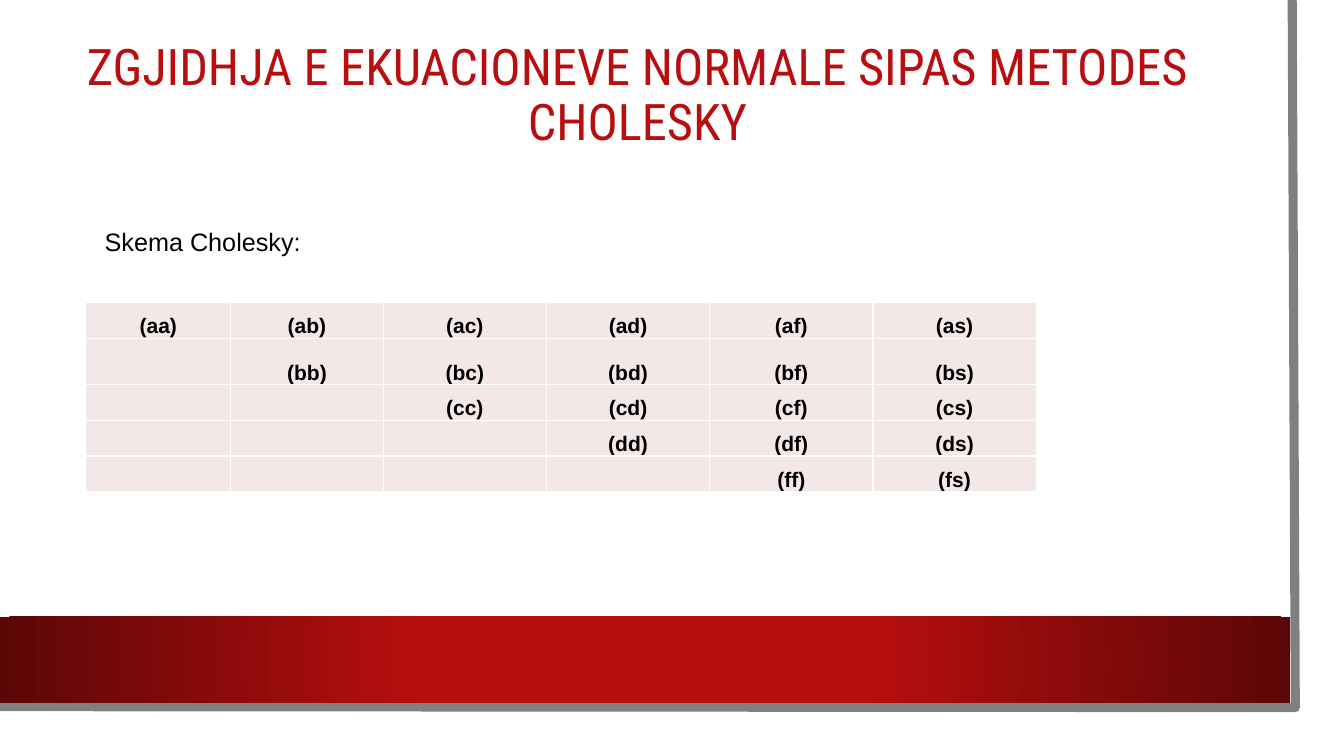
import pptx
import pptx.util
import pptx.dml.color
import pptx.enum.shapes
import pptx.enum.text
import pptx.oxml

COLORS = {"paper": "FFFFFF", "frame": "808080", "red": "B80E0F",
          "dark": "5C0707", "text": "000000", "cell": "F3E7E7"}
NS = 'xmlns:a="http://schemas.openxmlformats.org/drawingml/2006/main"'
MSO = pptx.enum.shapes.MSO_SHAPE
ALIGN = pptx.enum.text.PP_ALIGN
ANCHOR = pptx.enum.text.MSO_ANCHOR
Pt = pptx.util.Pt
rgb = pptx.dml.color.RGBColor.from_string

prs = pptx.Presentation()
prs.slide_width = pptx.util.Inches(13.33)
prs.slide_height = pptx.util.Inches(7.5)
s = prs.slides.add_slide(prs.slide_layouts[6])


def share(*percents):
    """Turn x, y, x, y... percentages of the slide into lengths."""
    sides = (prs.slide_width, prs.slide_height)
    return [int(sides[i % 2] * p / 100) for i, p in enumerate(percents)]


def style(p, font, size, color, bold=False):
    p.font.name = font
    p.font.size = Pt(size)
    p.font.bold = bold
    p.font.color.rgb = rgb(COLORS[color])
    for r in p.runs:
        r.font.name = font
        r.font.size = Pt(size)
        r.font.bold = bold
        r.font.color.rgb = rgb(COLORS[color])


# White paper
sp = s.shapes.add_shape(MSO.RECTANGLE, *share(0, 0, 98.25, 96.93))
sp.shadow.inherit = False
sp.fill.solid()
sp.fill.fore_color.rgb = rgb(COLORS["paper"])
sp.line.fill.background()

# Grey edge on the right and bottom
fb = s.shapes.build_freeform(*share(96.15, 0))
fb.add_line_segments([share(96.38, 93.6), share(-0.23, 93.47)], close=False)
sp = fb.convert_to_shape()
sp.shadow.inherit = False
sp.fill.background()
sp.line.color.rgb = rgb(COLORS["frame"])
sp.line.width = Pt(6.5)

# Red band with a gradient from the centre
sp = s.shapes.add_shape(MSO.RECTANGLE, *share(0, 81.6, 96, 11.37))
sp.shadow.inherit = False
sp.line.fill.background()
sp._element.spPr.prstGeom.addnext(pptx.oxml.parse_xml(
    f'<a:gradFill {NS} rotWithShape="1"><a:gsLst>'
    f'<a:gs pos="34000"><a:srgbClr val="{COLORS["red"]}"/></a:gs>'
    f'<a:gs pos="100000"><a:srgbClr val="{COLORS["dark"]}"/></a:gs></a:gsLst>'
    '<a:path path="circle"><a:fillToRect l="50000" t="50000" r="50000" b="50000"/>'
    '</a:path></a:gradFill>'))

# Title
tf = s.shapes.add_textbox(*share(4.8, 4.4, 85.28, 16.8)).text_frame
tf.word_wrap = True
tf.vertical_anchor = ANCHOR.MIDDLE
p = tf.paragraphs[0]
p.text = "ZGJIDHJA E EKUACIONEVE NORMALE SIPAS METODES CHOLESKY"
p.alignment = ALIGN.CENTER
p.line_spacing = 0.9
style(p, "Roboto Condensed", 36, "red")

# Table caption
tf = s.shapes.add_textbox(*share(7.05, 29.33, 79.13, 5.33)).text_frame
tf.word_wrap = True
p = tf.paragraphs[0]
p.text = "Skema Cholesky:"
style(p, "Arial", 18, "text")

# Upper triangular scheme
rows, cols = "abcdf", "abcdfs"
col_shares = [10.8, 11.33] + [12.15] * 4
row_shares = [4.73, 6.13] + [4.73] * 3
box = share(6.38, 40, sum(col_shares), sum(row_shares))
table = s.shapes.add_table(len(rows), len(cols), *box).table
table.first_row = table.horz_banding = False
for col, width in zip(table.columns, col_shares):
    col.width = share(width)[0]
for row, height in zip(table.rows, row_shares):
    row.height = share(0, height)[1]

for i, first in enumerate(rows):
    for j, second in enumerate(cols):
        cell = table.cell(i, j)
        cell.margin_left = cell.margin_right = cell.margin_top = pptx.util.Inches(0.01)
        cell.margin_bottom = 0
        cell.vertical_anchor = ANCHOR.BOTTOM
        for side in ("lnL", "lnR", "lnT", "lnB"):
            cell._tc.get_or_add_tcPr().append(pptx.oxml.parse_xml(
                f'<a:{side} {NS} w="12700"><a:solidFill>'
                f'<a:srgbClr val="{COLORS["paper"]}"/></a:solidFill></a:{side}>'))
        cell.fill.solid()
        cell.fill.fore_color.rgb = rgb(COLORS["cell"])
        p = cell.text_frame.paragraphs[0]
        if j >= i:
            p.text = f"({first}{second})"
        p.alignment = ALIGN.CENTER
        style(p, "Arial", 15, "text", bold=True)
        if j < i:
            p._p.get_or_add_endParaRPr().set("sz", "1500")

prs.save("out.pptx")
